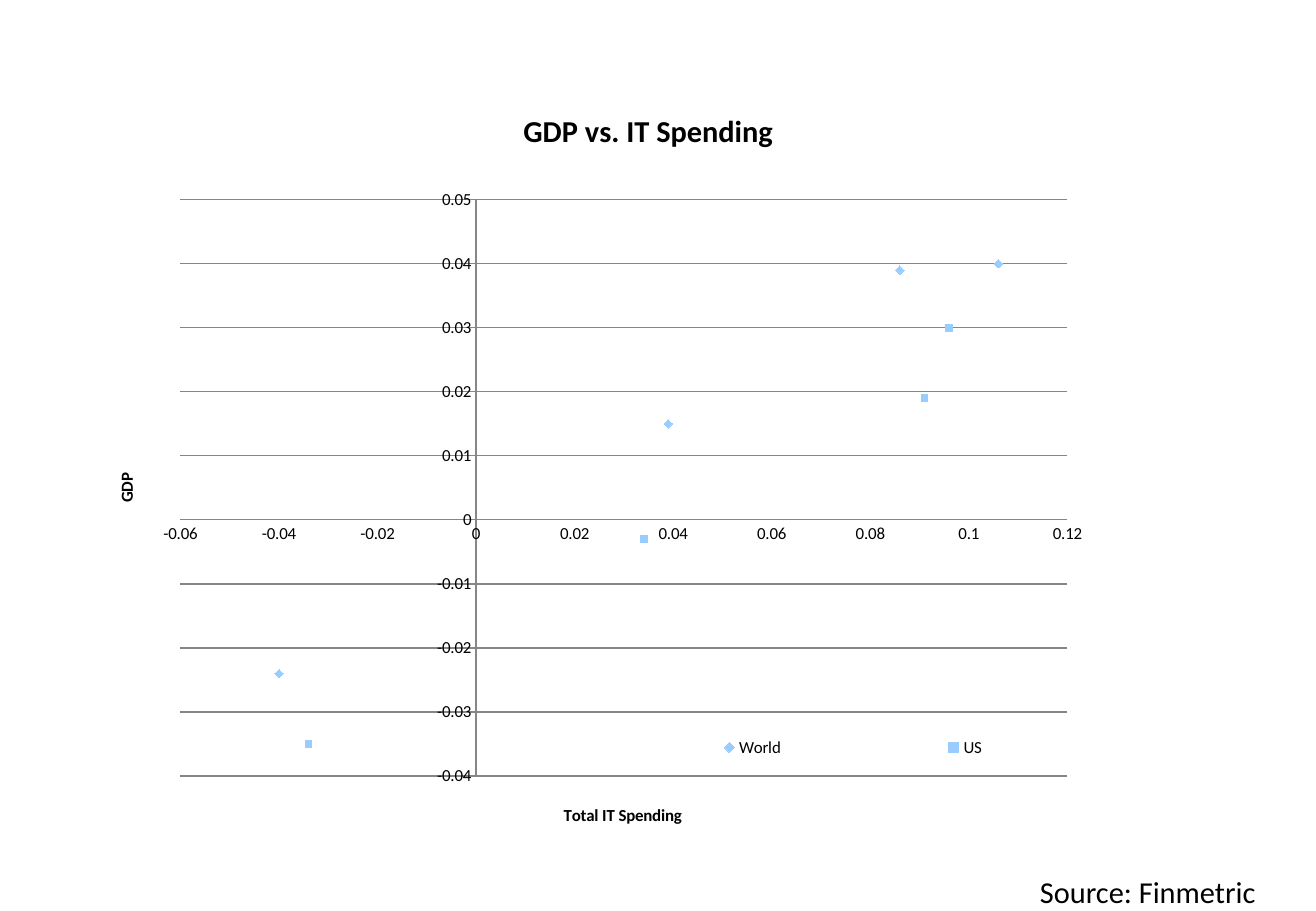
from lxml.etree import SubElement
from pptx import Presentation
from pptx.chart.data import XyChartData
from pptx.dml.color import RGBColor
from pptx.enum.chart import XL_CHART_TYPE as ChartType
from pptx.enum.chart import XL_LEGEND_POSITION as LegendPosition
from pptx.enum.chart import XL_MARKER_STYLE as MarkerStyle
from pptx.enum.chart import XL_TICK_MARK as TickMark
from pptx.enum.text import MSO_AUTO_SIZE as AutoSize
from pptx.oxml.ns import qn
from pptx.util import Inches, Pt

BLACK = RGBColor(0x00, 0x00, 0x00)
GRAY = RGBColor(0x86, 0x86, 0x86)
LIGHT_BLUE = RGBColor(0x99, 0xCC, 0xFF)
FONT = "Calibri"

# name: (marker style, marker size, points of IT spending and GDP growth)
SERIES = {
    "World": (MarkerStyle.DIAMOND, 5,
              [(0.086, 0.039), (0.039, 0.015), (-0.04, -0.024), (0.106, 0.04)]),
    "US": (MarkerStyle.SQUARE, 4,
           [(0.091, 0.019), (0.034, -0.003), (-0.034, -0.035), (0.096, 0.03)]),
}


def format_font(font, size, bold=False):
    for name, value in {"name": FONT, "size": Pt(size), "bold": bold}.items():
        setattr(font, name, value)
    font.color.rgb = BLACK


def set_layout(element, index, x, y, w, h, inner=False):
    """Place a chart part by shares of the chart's size."""
    for old_layout in element.findall(qn("c:layout")):
        element.remove(old_layout)
    layout = SubElement(element, qn("c:layout"))
    element.insert(index, layout)
    manual = SubElement(layout, qn("c:manualLayout"))
    settings = {"layoutTarget": "inner"} if inner else {}
    settings |= {"xMode": "edge", "yMode": "edge", "x": x, "y": y, "w": w, "h": h}
    for tag, value in settings.items():
        SubElement(manual, qn(f"c:{tag}")).set("val", str(value))


presentation = Presentation()
presentation.slide_width = Inches(10.83)
presentation.slide_height = Inches(7.5)
slide = presentation.slides.add_slide(presentation.slide_layouts[6])

# Scatter chart
chart_data = XyChartData()
for name, (_, _, points) in SERIES.items():
    data_series = chart_data.add_series(name)
    for spending, gdp in points:
        data_series.add_data_point(spending, gdp)
chart = slide.shapes.add_chart(
    ChartType.XY_SCATTER, Inches(0.9), Inches(0.68), Inches(8.87), Inches(6.22),
    chart_data).chart
format_font(chart.font, 10)

chart.has_title = True
title_frame = chart.chart_title.text_frame
title_frame.text = "GDP vs. IT Spending"
format_font(title_frame.paragraphs[0].runs[0].font, 18, bold=True)

plot = chart.plots[0]
plot.vary_by_categories = False
for series, (style, size, _) in zip(plot.series, SERIES.values()):
    series.smooth = False
    series.format.line.fill.background()
    series.marker.style = style
    series.marker.size = size
    for paint in (series.marker.format.fill, series.marker.format.line.fill):
        paint.solid()
        paint.fore_color.rgb = LIGHT_BLUE

# Axes
for axis, title, low, high, step in (
        (chart.category_axis, "Total IT Spending", -0.06, 0.12, 0.02),
        (chart.value_axis, "GDP", -0.04, 0.05, 0.01)):
    axis.minimum_scale, axis.maximum_scale, axis.major_unit = low, high, step
    axis.major_tick_mark = axis.minor_tick_mark = TickMark.NONE
    axis.has_major_gridlines = axis is not chart.category_axis and title == "GDP"
    axis.format.line.color.rgb = GRAY
    axis.format.line.width = Pt(0.75)
    axis.tick_labels.number_format = "General"
    axis.tick_labels.number_format_is_linked = False
    format_font(axis.tick_labels.font, 10)
    axis.axis_title.text_frame.text = title
    format_font(axis.axis_title.text_frame.paragraphs[0].runs[0].font, 10, bold=True)
gridlines = chart.value_axis.major_gridlines.format.line
gridlines.color.rgb = GRAY
gridlines.width = Pt(0.75)

# Legend inside the plot
chart.has_legend = True
chart.legend.position = LegendPosition.RIGHT
chart.legend.include_in_layout = False
format_font(chart.legend.font, 10)
legend_element = chart.legend._element
set_layout(legend_element, 1, 0.42, 0.85, 0.54, 0.06)
plot_area = chart._chartSpace.chart.plotArea
set_layout(plot_area, 0, 0.066, 0.155, 0.823, 0.763, inner=True)

# Source note
source_box = slide.shapes.add_textbox(Inches(8.46), Inches(7.14), Inches(2.16), Inches(0.4))
source_frame = source_box.text_frame
source_frame.word_wrap = False
source_frame.auto_size = AutoSize.SHAPE_TO_FIT_TEXT
source_frame.text = "Source: Finmetric"
format_font(source_frame.paragraphs[0].runs[0].font, 18)

presentation.save("out.pptx")
